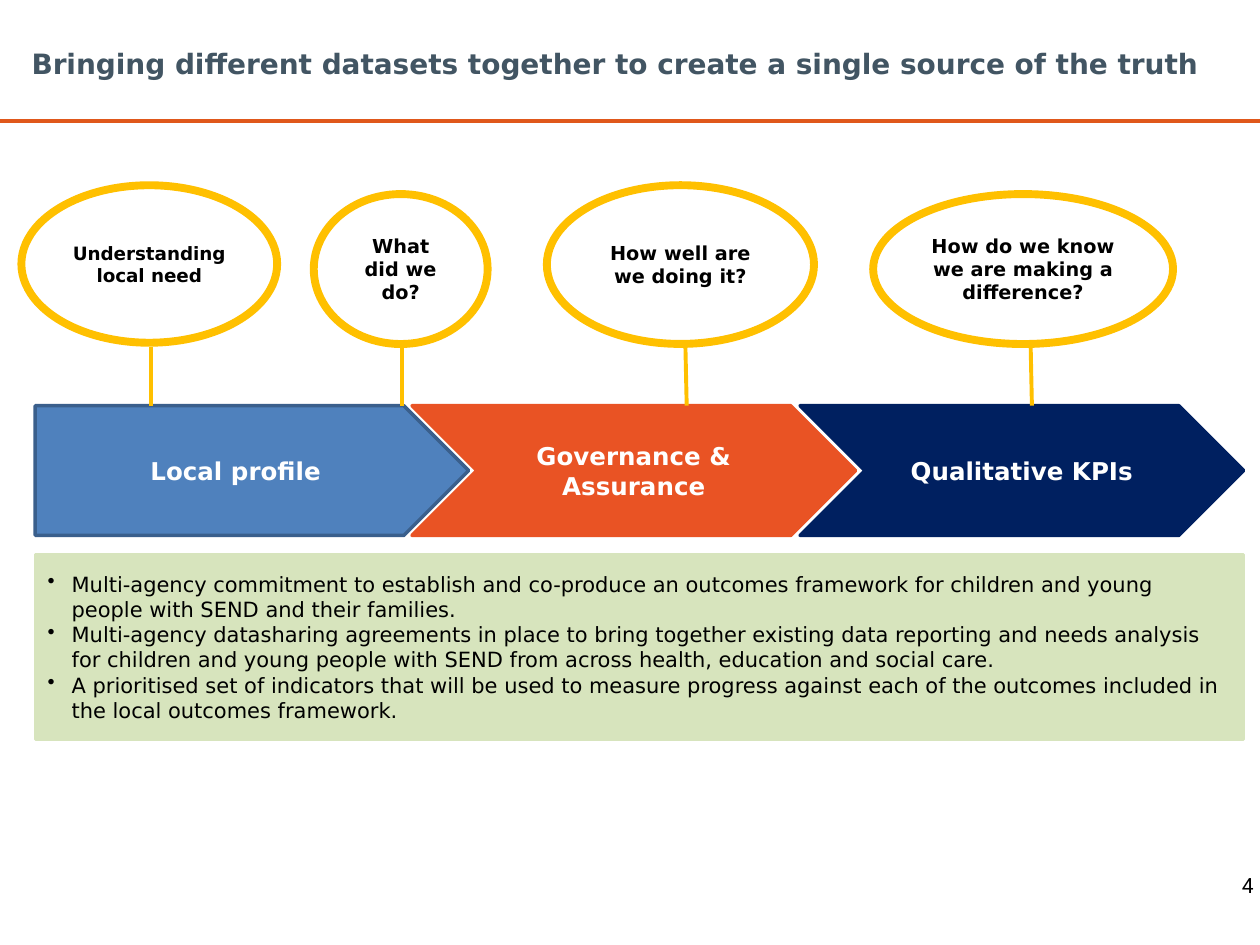
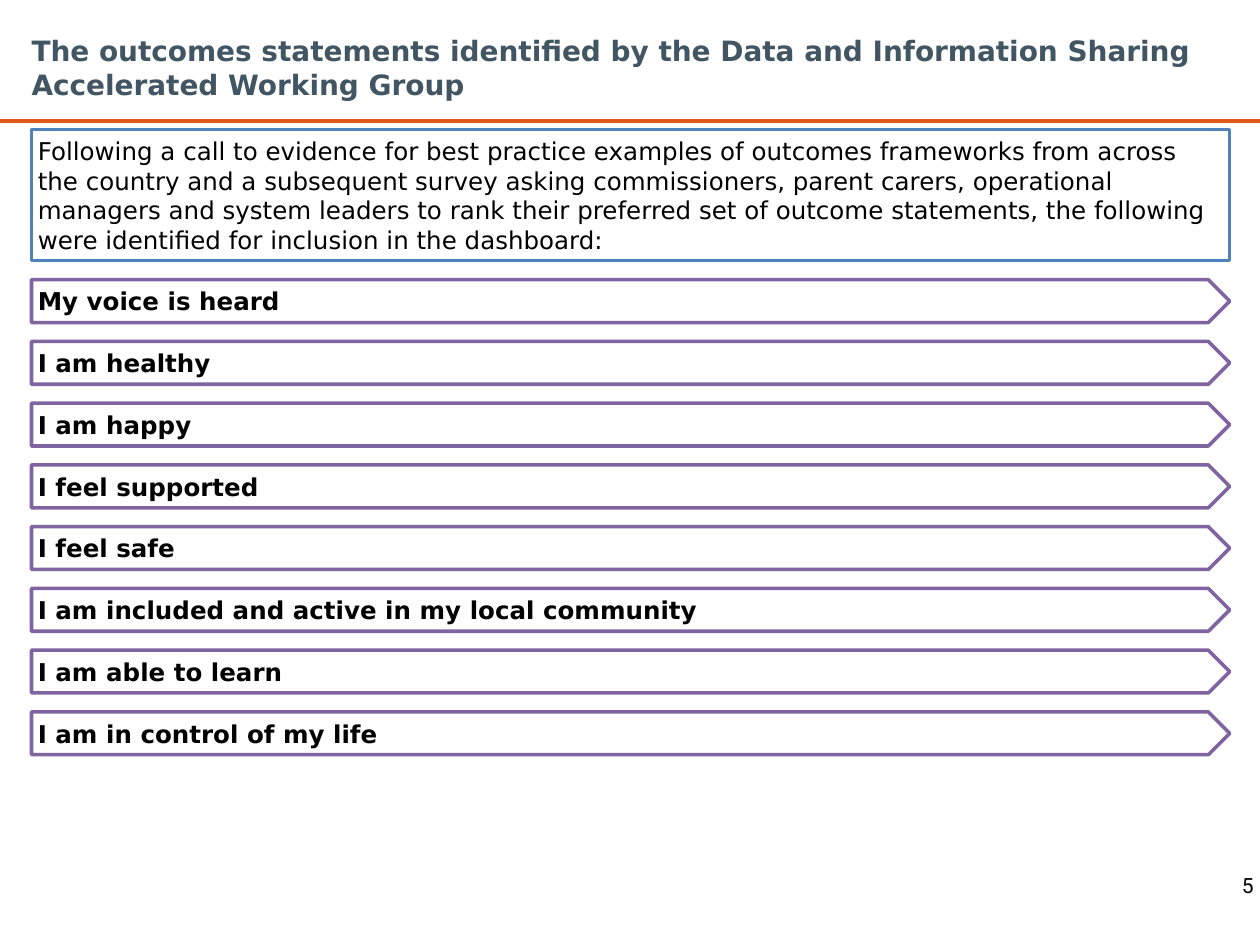
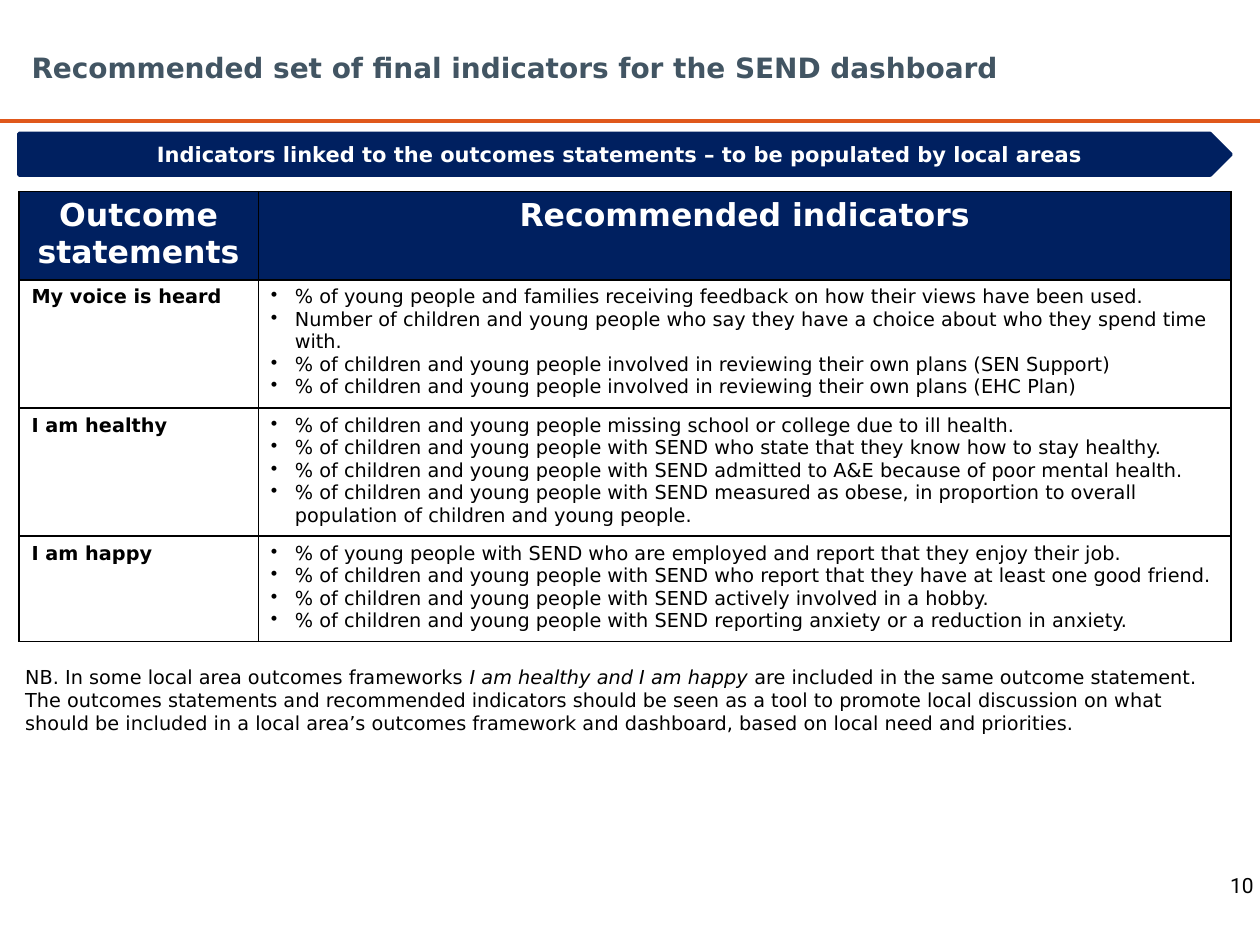
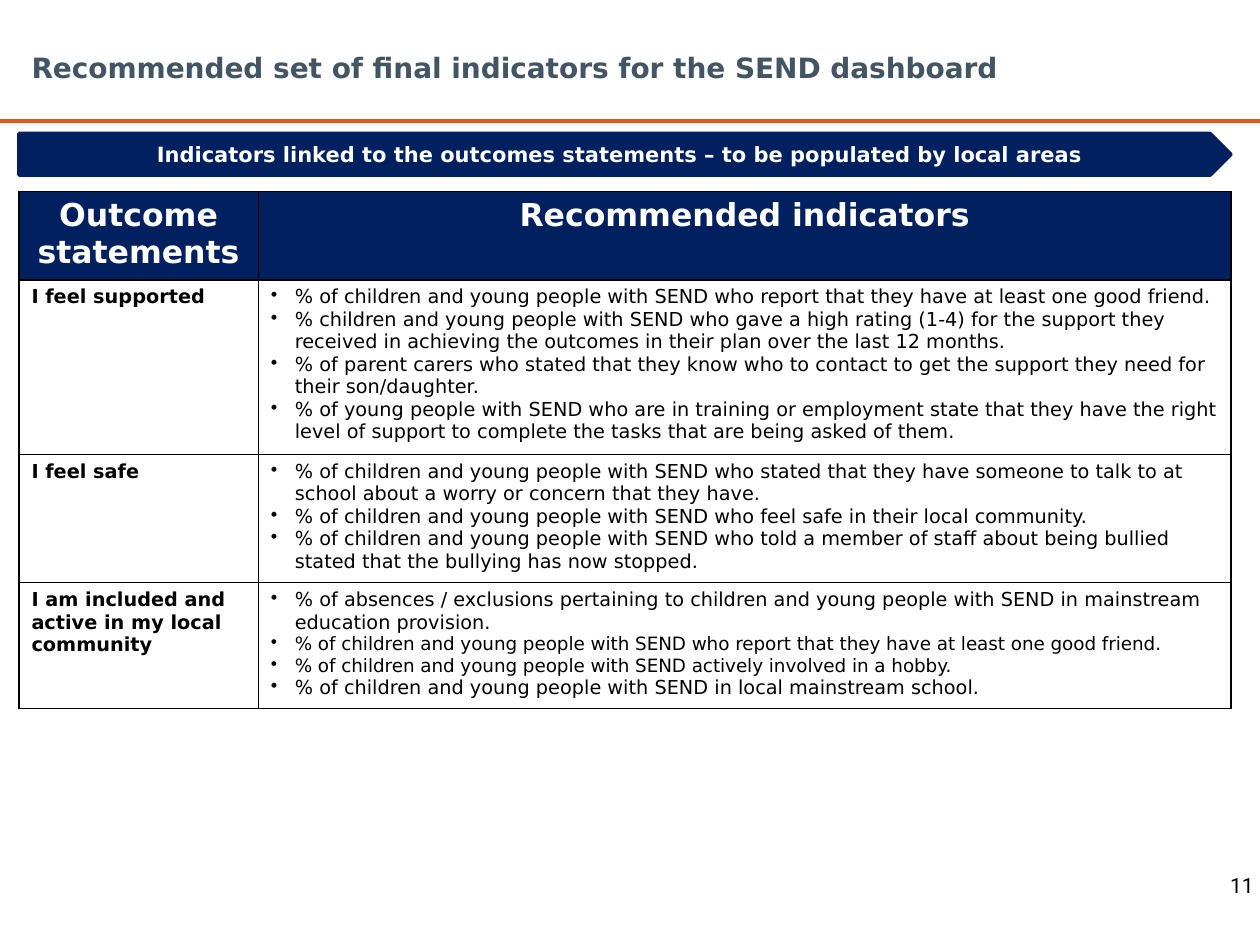
"""Build four slides on the SEND outcomes framework and its dashboard indicators."""
import lxml.etree
import pptx
import pptx.dml.color
import pptx.enum.shapes
import pptx.enum.text
import pptx.oxml.ns
import pptx.util

RGBColor = pptx.dml.color.RGBColor
BLACK = RGBColor(0x00, 0x00, 0x00)
WHITE = RGBColor(0xFF, 0xFF, 0xFF)
SLATE = RGBColor(0x42, 0x55, 0x63)
RULE_ORANGE = RGBColor(0xE0, 0x58, 0x1B)
ORANGE = RGBColor(0xE9, 0x53, 0x24)
NAVY = RGBColor(0x00, 0x20, 0x60)
BLUE = RGBColor(0x4F, 0x81, 0xBD)
DARK_BLUE = RGBColor(0x3A, 0x5F, 0x8C)
YELLOW = RGBColor(0xFF, 0xC0, 0x00)
GREEN = RGBColor(0xD7, 0xE4, 0xBD)
PURPLE = RGBColor(0x80, 0x64, 0xA2)

SHAPE = pptx.enum.shapes.MSO_SHAPE
ALIGN = pptx.enum.text.PP_ALIGN
ANCHOR = pptx.enum.text.MSO_ANCHOR
AUTO_SIZE = pptx.enum.text.MSO_AUTO_SIZE

EMU_PER_PX = 9144
FONT = "DejaVu Sans"
NUMBER_FONT = "Roboto"
TITLE_ONLY = 5
INDENT = 19

INDICATOR_TITLE = "Recommended set of final indicators for the SEND dashboard"
INDICATOR_BANNER = "Indicators linked to the outcomes statements – to be populated by local areas"
GOOD_FRIEND = "% of children and young people with SEND who report that they have at least one good friend."
HOBBY = "% of children and young people with SEND actively involved in a hobby."


def px(length):
    """Turn whole px into EMU."""
    return pptx.util.Emu(length * EMU_PER_PX)


def add_element(parent, tag, **attributes):
    """Append a DrawingML child element."""
    return lxml.etree.SubElement(parent, pptx.oxml.ns.qn(tag), attributes)


class Deck:
    """Hold the shared style and the current slide."""

    def __init__(self):
        """Start an empty presentation."""
        self.presentation = pptx.Presentation()
        self.presentation.slide_width = px(1000)
        self.presentation.slide_height = px(750)
        self.layout = self.presentation.slide_layouts[TITLE_ONLY]
        self.slide = None

    def add_slide(self, title, number, top=25, height=57):
        """Add a slide with its title and number."""
        first = self.slide is None
        self.slide = self.presentation.slides.add_slide(self.layout)
        if first:
            rule = self.line((0, 96), (1000, 96), RULE_ORANGE, 2)
            self.layout.shapes.element.append(rule.element)
        shape = self.slide.shapes.title
        shape.left, shape.top, shape.width, shape.height = map(px, (25, top, 930, height))
        self.frame(shape, margin=0)
        self.add_text(shape.text_frame, [title], 16, SLATE, bold=True)
        box = self.text_box((955, 685, 45, 35), [number], 12, ALIGN.RIGHT, NUMBER_FONT)
        box.text_frame.vertical_anchor = ANCHOR.MIDDLE
        box.text_frame.word_wrap = False

    def frame(self, shape, margin=None, grow=False):
        """Set anchor, wrap, insets and fitting of a text frame."""
        frame = shape.text_frame
        frame.word_wrap = True
        frame.vertical_anchor = ANCHOR.MIDDLE
        frame.auto_size = AUTO_SIZE.SHAPE_TO_FIT_TEXT if grow else AUTO_SIZE.NONE
        if margin is not None:
            frame.margin_left = frame.margin_right = px(margin)
            frame.margin_top = frame.margin_bottom = px(margin)

    def add_text(self, frame, paragraphs, size, color=BLACK, bold=False,
                 align=ALIGN.LEFT, bullet=False, font=FONT):
        """Add paragraphs, each a string or a list of (text, changes) runs."""
        for index, runs in enumerate(paragraphs):
            paragraph = frame.add_paragraph() if index else frame.paragraphs[0]
            if bullet:
                properties = paragraph._p.get_or_add_pPr()
                properties.set("marL", str(px(INDENT)))
                properties.set("indent", str(px(-INDENT)))
                add_element(properties, "a:buChar", char="•")
            paragraph.alignment = align
            for text, changes in [(runs, {})] if isinstance(runs, str) else runs:
                run = paragraph.add_run()
                run.text = text
                run.font.name = font
                run.font.size = pptx.util.Pt(changes.get("size", size))
                run.font.bold = bold
                run.font.italic = changes.get("italic", False)
                run.font.color.rgb = color

    def shape(self, kind, box, fill, outline, paragraphs, size, color=BLACK, bold=False,
              align=ALIGN.CENTER, bullet=False, weight=2, margin=None, grow=False):
        """Add a preset shape with text."""
        shape = self.slide.shapes.add_shape(kind, *map(px, box))
        shape.shadow.inherit = False
        if fill is None:
            shape.fill.background()
        else:
            shape.fill.solid()
            shape.fill.fore_color.rgb = fill
        shape.line.color.rgb = outline
        shape.line.width = pptx.util.Pt(weight)
        self.frame(shape, margin, grow)
        self.add_text(shape.text_frame, paragraphs, size, color, bold, align, bullet)

    def text_box(self, box, paragraphs, size, align=ALIGN.LEFT, font=FONT):
        """Add a text box that grows with its text."""
        shape = self.slide.shapes.add_textbox(*map(px, box))
        self.frame(shape, 5, grow=True)
        shape.text_frame.vertical_anchor = ANCHOR.TOP
        self.add_text(shape.text_frame, paragraphs, size, align=align, font=font)
        return shape

    def line(self, start, end, color, weight):
        """Add a straight line."""
        connector = self.slide.shapes.add_connector(
            pptx.enum.shapes.MSO_CONNECTOR.STRAIGHT, *map(px, start + end))
        connector.line.color.rgb = color
        connector.line.width = pptx.util.Pt(weight)
        add_element(connector.element.spPr, "a:effectLst")
        return connector

    def cell(self, cell, fill, paragraphs, size, **style):
        """Border, fill and fill in the text of one table cell."""
        properties = cell._tc.get_or_add_tcPr()
        for side in ("a:lnL", "a:lnR", "a:lnT", "a:lnB"):
            border = add_element(properties, side, w=str(pptx.util.Pt(1)))
            add_element(add_element(border, "a:solidFill"), "a:srgbClr", val=str(BLACK))
        if fill is None:
            cell.fill.background()
        else:
            cell.fill.solid()
            cell.fill.fore_color.rgb = fill
        self.add_text(cell.text_frame, paragraphs, size, **style)

    def indicators(self, outcomes, height):
        """Add the banner and the table of outcomes and their indicators."""
        self.shape(SHAPE.PENTAGON, (15, 106, 962, 33), NAVY, NAVY,
                   [INDICATOR_BANNER], 12, WHITE, bold=True)
        graphic = self.slide.shapes.add_table(
            len(outcomes) + 1, 2, *map(px, (15, 152, 962, height)))
        table = graphic.table
        table.horz_banding = False
        for column, width in zip(table.columns, (190, 772)):
            column.width = px(width)
        for row in table.rows:
            row.height = px(41)
        graphic.height = px(height)
        for column, heading in enumerate(("Outcome statements", "Recommended indicators")):
            self.cell(table.cell(0, column), NAVY, [heading], 18,
                      color=WHITE, bold=True, align=ALIGN.CENTER)
        for row, (statement, measures) in enumerate(outcomes.items(), 1):
            self.cell(table.cell(row, 0), None, [statement], 11, bold=True)
            self.cell(table.cell(row, 1), None, measures, 11, bullet=True)


def add_datasets(deck):
    """Add the slide on joining datasets."""
    deck.add_slide("Bringing different datasets together to create a single source of the truth",
                   "4", top=30, height=40)
    stages = [
        (SHAPE.PENTAGON, 28, 344, BLUE, DARK_BLUE, "Local profile"),
        (SHAPE.CHEVRON, 327, 352, ORANGE, ORANGE, "Governance & Assurance"),
        (SHAPE.CHEVRON, 635, 352, NAVY, NAVY, "Qualitative KPIs"),
    ]
    for kind, left, width, fill, outline, label in stages:
        deck.shape(kind, (left, 322, width, 103), fill, outline, [label], 14, WHITE, bold=True)
    questions = [
        ((17, 147, 203, 125), 10.5, "Understanding local need"),
        ((249, 154, 138, 119), 11, "What did we do?"),
        ((434, 147, 212, 126), 11, "How well are we doing it?"),
        ((693, 154, 238, 119), 11, "How do we know we are making a difference?"),
    ]
    for box, size, question in questions:
        deck.shape(SHAPE.OVAL, box, WHITE, YELLOW, [question], size, bold=True, weight=4.5)
    for start, end in ((120, 120), (319, 319), (544, 545), (818, 819)):
        deck.line((start, 275), (end, 322), YELLOW, 2.25)
    deck.shape(SHAPE.RECTANGLE, (28, 440, 959, 147), GREEN, GREEN, [
        "Multi-agency commitment to establish and co-produce an outcomes framework for "
        "children and young people with SEND and their families.",
        "Multi-agency datasharing agreements in place to bring together existing data "
        "reporting and needs analysis for children and young people with SEND from across "
        "health, education and social care.",
        "A prioritised set of indicators that will be used to measure progress against each "
        "of the outcomes included in the local outcomes framework.",
    ], 12, align=ALIGN.LEFT, bullet=True)


def add_statements(deck):
    """Add the slide listing the outcomes statements."""
    deck.add_slide("The outcomes statements identified by the Data and Information Sharing "
                   "Accelerated Working Group", "5")
    style = {"align": ALIGN.LEFT, "margin": 5, "grow": True}
    deck.shape(SHAPE.RECTANGLE, (25, 103, 951, 104), WHITE, BLUE, [
        "Following a call to evidence for best practice examples of outcomes frameworks from "
        "across the country and a subsequent survey asking commissioners, parent carers, "
        "operational managers and system leaders to rank their preferred set of outcome "
        "statements, the following were identified for inclusion in the dashboard:",
    ], 14, **style)
    statements = [
        "My voice is heard", "I am healthy", "I am happy", "I feel supported", "I feel safe",
        "I am included and active in my local community", "I am able to learn",
        "I am in control of my life",
    ]
    for index, statement in enumerate(statements):
        deck.shape(SHAPE.PENTAGON, (25, 222 + 49 * index, 951, 34), None, PURPLE,
                   [statement], 14, bold=True, **style)


def add_first_indicators(deck):
    """Add the indicators for voice, health and happiness."""
    deck.add_slide(INDICATOR_TITLE, "10")
    deck.indicators({
        "My voice is heard": [
            "% of young people and families receiving feedback on how their views have been used.",
            "Number of children and young people who say they have a choice about who they "
            "spend time with.",
            "% of children and young people involved in reviewing their own plans (SEN Support)",
            "% of children and young people involved in reviewing their own plans (EHC Plan)",
        ],
        "I am healthy": [
            "% of children and young people missing school or college due to ill health.",
            "% of children and young people with SEND who state that they know how to stay healthy.",
            "% of children and young people with SEND admitted to A&E because of poor mental health.",
            "% of children and young people with SEND measured as obese, in proportion to "
            "overall population of children and young people.",
        ],
        "I am happy": [
            "% of young people with SEND who are employed and report that they enjoy their job.",
            GOOD_FRIEND,
            HOBBY,
            "% of children and young people with SEND reporting anxiety or a reduction in anxiety.",
        ],
    }, 355)
    deck.text_box((15, 523, 962, 66), [[
        ("NB. In some local area outcomes frameworks ", {}),
        ("I am healthy and I am happy", {"italic": True}),
        (" are included in the same outcome statement. The outcomes statements and recommended "
         "indicators should be seen as a tool to promote local discussion on what should be "
         "included in a local area’s outcomes framework and dashboard, based on local need "
         "and priorities.", {}),
    ]], 11)


def add_second_indicators(deck):
    """Add the indicators for support, safety and inclusion."""
    deck.add_slide(INDICATOR_TITLE, "11")
    deck.indicators({
        "I feel supported": [
            GOOD_FRIEND,
            "% children and young people with SEND who gave a high rating (1-4) for the support "
            "they received in achieving the outcomes in their plan over the last 12 months.",
            "% of parent carers who stated that they know who to contact to get the support "
            "they need for their son/daughter.",
            "% of young people with SEND who are in training or employment state that they have "
            "the right level of support to complete the tasks that are being asked of them.",
        ],
        "I feel safe": [
            "% of children and young people with SEND who stated that they have someone to talk "
            "to at school about a worry or concern that they have.",
            "% of children and young people with SEND who feel safe in their local community.",
            "% of children and young people with SEND who told a member of staff about being "
            "bullied stated that the bullying has now stopped.",
        ],
        "I am included and active in my local community": [
            "% of absences / exclusions pertaining to children and young people with SEND in "
            "mainstream education provision.",
            [(GOOD_FRIEND, {"size": 10.5})],
            [(HOBBY, {"size": 10.5})],
            "% of children and young people with SEND in local mainstream school.",
        ],
    }, 408)


def main():
    """Build and save the presentation."""
    deck = Deck()
    add_datasets(deck)
    add_statements(deck)
    add_first_indicators(deck)
    add_second_indicators(deck)
    deck.presentation.save("out.pptx")


if __name__ == "__main__":
    main()
